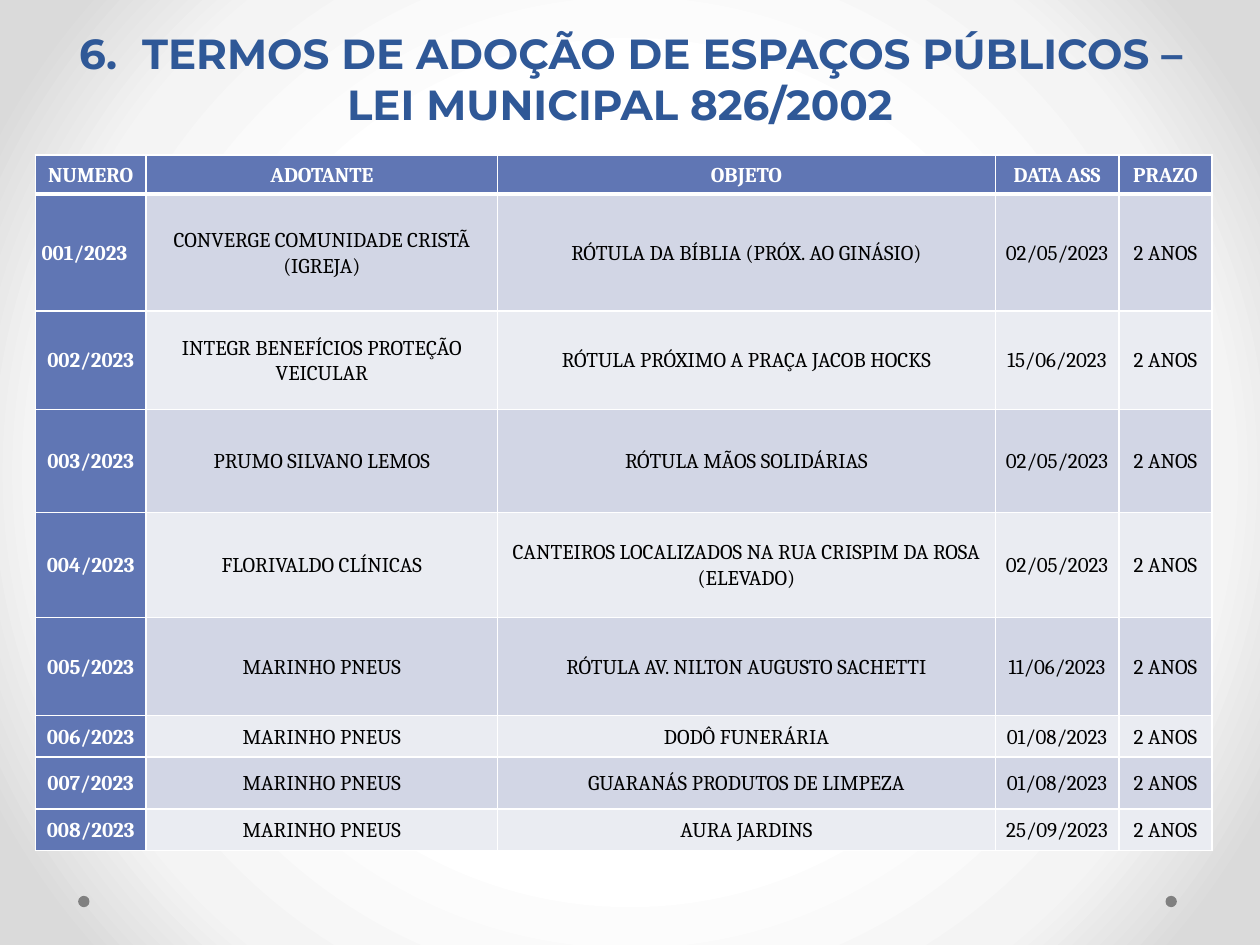
from lxml import etree
from pptx import Presentation
from pptx.dml.color import RGBColor
from pptx.enum import shapes, text
from pptx.oxml.ns import qn
from pptx.util import Inches, Pt

# Content
TITLE = "6.\tTERMOS DE ADOÇÃO DE ESPAÇOS PÚBLICOS – LEI MUNICIPAL 826/2002\t"
HEADER = ("NUMERO", "ADOTANTE", "OBJETO", "DATA ASS", "PRAZO")
TERM = "2 ANOS"
TYRES = "MARINHO PNEUS"
ADOPTIONS = [
    ("CONVERGE COMUNIDADE CRISTÃ (IGREJA)", "RÓTULA DA BÍBLIA (PRÓX. AO GINÁSIO)", "02/05/2023"),
    ("INTEGR BENEFÍCIOS PROTEÇÃO VEICULAR", "RÓTULA PRÓXIMO A PRAÇA JACOB HOCKS", "15/06/2023"),
    ("PRUMO SILVANO LEMOS", "RÓTULA MÃOS SOLIDÁRIAS", "02/05/2023"),
    ("FLORIVALDO CLÍNICAS", "CANTEIROS LOCALIZADOS NA RUA CRISPIM DA ROSA (ELEVADO)", "02/05/2023"),
    (TYRES, "RÓTULA AV. NILTON AUGUSTO SACHETTI", "11/06/2023"),
    (TYRES, "DODÔ FUNERÁRIA", "01/08/2023"),
    (TYRES, "GUARANÁS PRODUTOS DE LIMPEZA", "01/08/2023"),
    (TYRES, "AURA JARDINS", "25/09/2023"),
]
COLUMN_WIDTHS = (0.88, 2.79, 3.95, 0.98, 0.74)
ROW_HEIGHTS = (0.31, 0.93, 0.78, 0.82, 0.83, 0.78, 0.33, 0.41, 0.33)

THEME = {
    "title_font": "Montserrat", "title_size": 24, "title": "2F5897",
    "table_font": "Cambria", "table_size": 12, "line_spacing": 1.07,
    "head": "6076B4", "bands": ("D2D6E5", "EAECF2"),
    "light": "FFFFFF", "dark": "000000", "dot": "808080",
    "backdrop": ((50, "FFFFFF"), (76, "F4F4F4"), (92, "DADADA")),
}


def style_text(paragraph, font_name, size, color, bold):
    for span in paragraph.runs:
        span.font.name = font_name
        span.font.size = Pt(size)
        span.font.bold = bold
        span.font.color.rgb = RGBColor.from_string(color)


def add_color(parent, color):
    etree.SubElement(parent, qn("a:srgbClr"), val=color)


def paint_backdrop(page):
    page.background.fill.gradient()
    gradient = page.element.find(".//" + qn("a:gradFill"))
    for child in list(gradient):
        gradient.remove(child)
    stops = etree.SubElement(gradient, qn("a:gsLst"))
    for position, color in THEME["backdrop"]:
        add_color(etree.SubElement(stops, qn("a:gs"), pos=str(position * 1000)), color)
    circle = etree.SubElement(gradient, qn("a:path"), path="circle")
    etree.SubElement(circle, qn("a:fillToRect"), l="50000", t="50000", r="50000", b="50000")


def set_borders(cell, top, bottom):
    properties = cell._tc.get_or_add_tcPr()
    widths = {"a:lnL": 1, "a:lnR": 1, "a:lnT": top, "a:lnB": bottom}
    for index, (side, width) in enumerate(widths.items()):
        line = etree.Element(qn(side), w=str(Pt(width)))
        add_color(etree.SubElement(line, qn("a:solidFill")), THEME["light"])
        properties.insert(index, line)


def format_cell(cell, row, column):
    on_head = row == 0 or column == 0
    fill = THEME["head"] if on_head else THEME["bands"][(row - 1) % 2]
    cell.fill.solid()
    cell.fill.fore_color.rgb = RGBColor.from_string(fill)
    cell.margin_left = cell.margin_right = Inches(0.05)
    cell.margin_top = cell.margin_bottom = 0
    cell.vertical_anchor = text.MSO_ANCHOR.MIDDLE
    paragraph = cell.text_frame.paragraphs[0]
    # The first number is the only cell set to the left
    first_number = (row, column) == (1, 0)
    paragraph.alignment = text.PP_ALIGN.LEFT if first_number else text.PP_ALIGN.CENTER
    paragraph.line_spacing = THEME["line_spacing"]
    style_text(paragraph, THEME["table_font"], THEME["table_size"],
               THEME["light"] if on_head else THEME["dark"], on_head)
    set_borders(cell, 3 if row == 1 else 1, 3 if row == 0 else 1)


def add_adoption_table(page):
    rows = [HEADER] + [(f"{number:03}/2023", *adoption, TERM)
                       for number, adoption in enumerate(ADOPTIONS, 1)]
    table = page.shapes.add_table(
        len(rows), len(HEADER), Inches(0.28), Inches(1.23),
        Inches(sum(COLUMN_WIDTHS)), Inches(sum(ROW_HEIGHTS))).table
    table.first_col = True
    for column, width in zip(table.columns, COLUMN_WIDTHS):
        column.width = Inches(width)
    for row, height in zip(table.rows, ROW_HEIGHTS):
        row.height = Inches(height)
    for row, values in enumerate(rows):
        for column, value in enumerate(values):
            cell = table.cell(row, column)
            cell.text_frame.text = value
            format_cell(cell, row, column)


def add_title(page):
    title = page.shapes.title
    title.left, title.top = Inches(0.4), Inches(0.13)
    title.width, title.height = Inches(9.21), Inches(0.94)
    frame = title.text_frame
    frame.text = TITLE
    frame.word_wrap = True
    frame.auto_size = text.MSO_AUTO_SIZE.NONE
    frame.vertical_anchor = text.MSO_ANCHOR.BOTTOM
    paragraph = frame.paragraphs[0]
    paragraph.alignment = text.PP_ALIGN.CENTER
    style_text(paragraph, THEME["title_font"], THEME["title_size"], THEME["title"], True)


def add_dots(page):
    for left in (9.25, 0.62):
        dot = page.shapes.add_shape(shapes.MSO_SHAPE.OVAL, Inches(left), Inches(7.11),
                                    Inches(0.09), Inches(0.09))
        dot.shadow.inherit = False
        dot.fill.solid()
        dot.fill.fore_color.rgb = RGBColor.from_string(THEME["dot"])
        dot.line.fill.background()


def main():
    deck = Presentation()
    deck.slide_width, deck.slide_height = Inches(10), Inches(7.5)
    page = deck.slides.add_slide(deck.slide_layouts[5])
    paint_backdrop(page)
    add_dots(page)
    add_title(page)
    add_adoption_table(page)
    deck.save("out.pptx")


if __name__ == "__main__":
    main()
